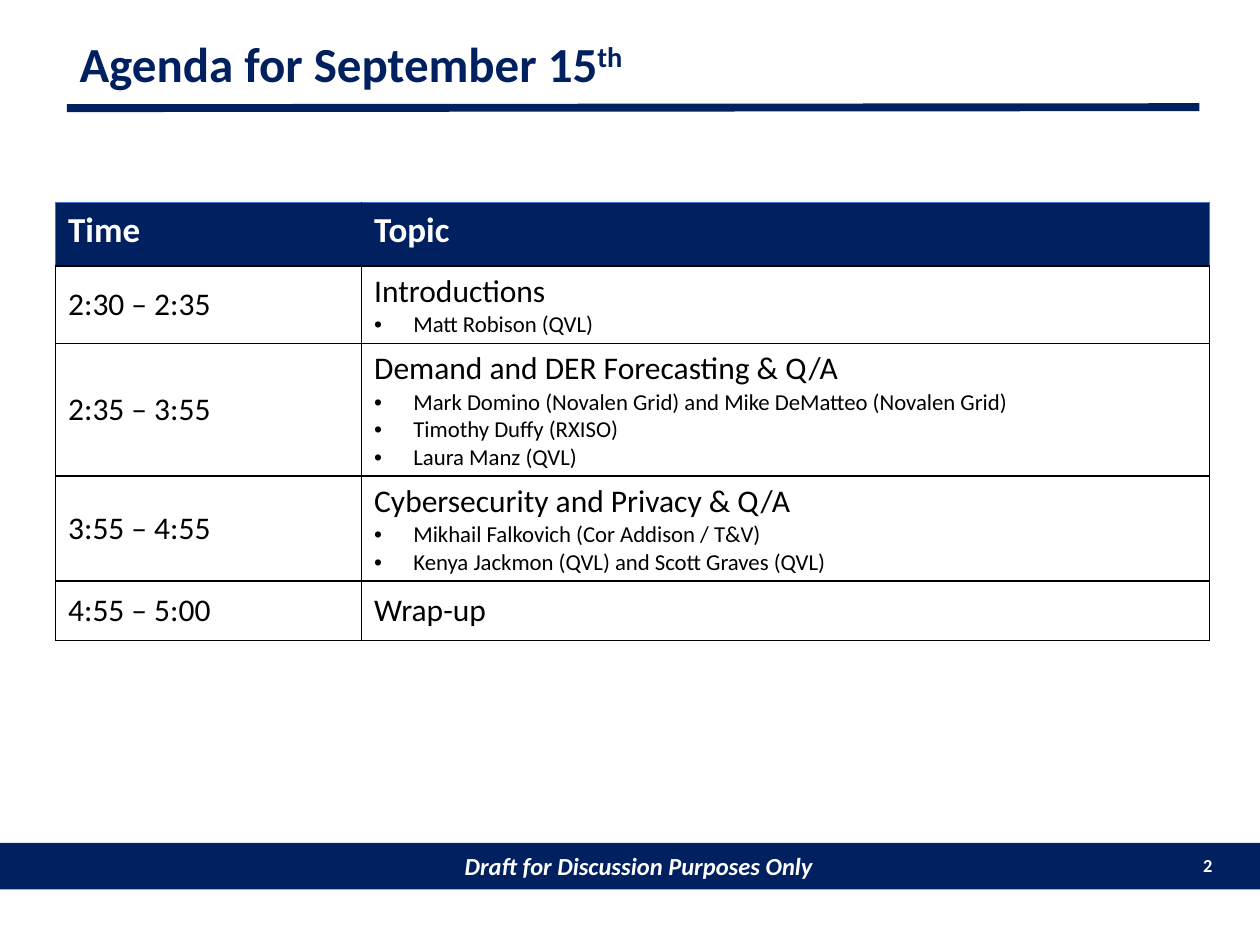
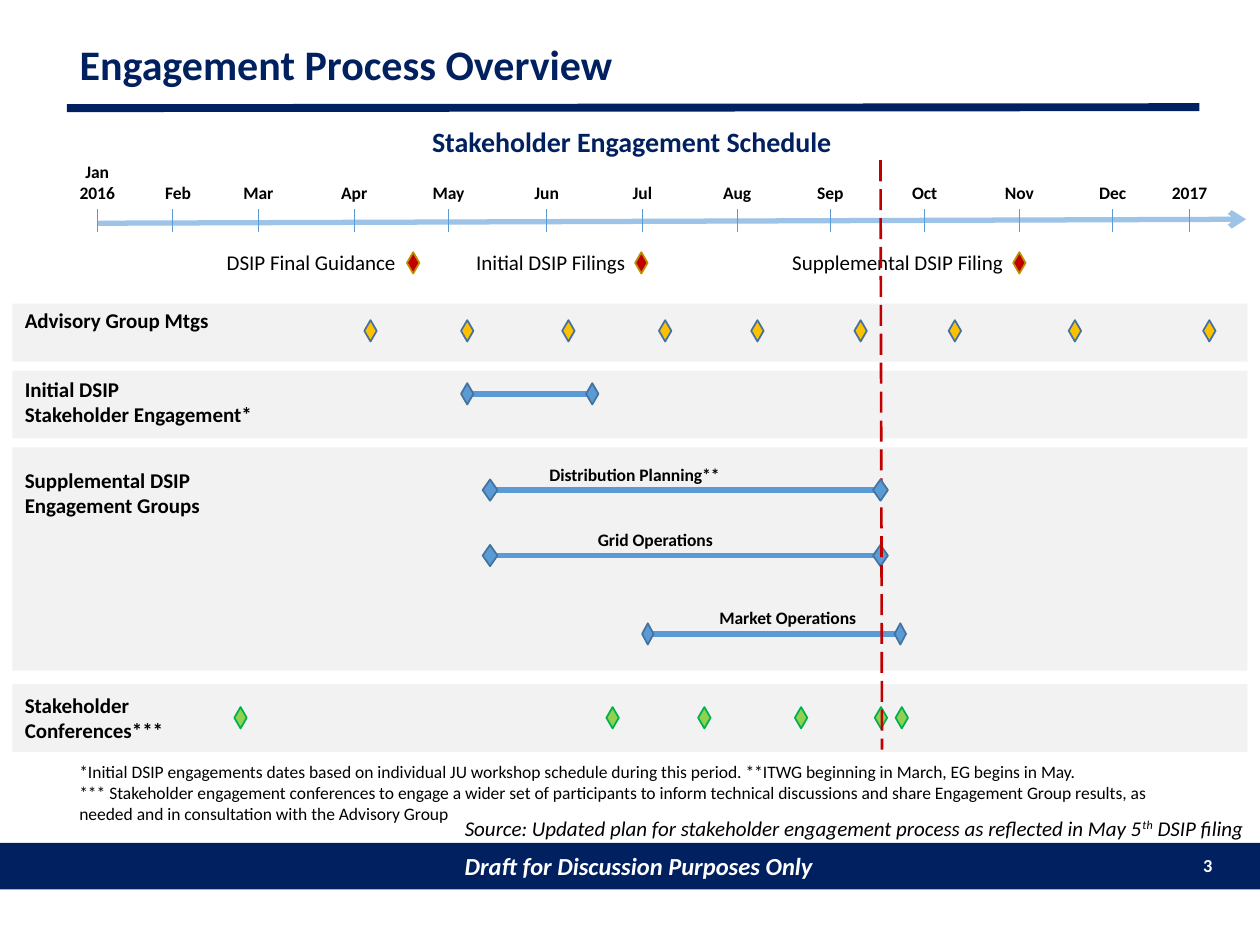
from lxml.etree import SubElement
from pptx import Presentation
from pptx.dml.color import RGBColor
from pptx.enum.dml import MSO_LINE
from pptx.enum.shapes import MSO_CONNECTOR, MSO_SHAPE
from pptx.enum.text import MSO_ANCHOR, MSO_AUTO_SIZE, PP_ALIGN
from pptx.oxml import parse_xml
from pptx.oxml.ns import nsdecls, qn
from pptx.util import Cm, Pt

COLORS = {
    "navy": "002060", "white": "FFFFFF", "black": "000000", "grey": "F2F2F2",
    "blue": "5B9BD5", "blue_edge": "43739E", "axis": "9DC3E6", "table_edge": "4472C4",
    "red": "C00000", "red_edge": "BD8E00", "yellow": "FFC000",
    "green": "92D050", "green_edge": "00B050",
}
FONT = "Calibri"

AGENDA = [
    ("2:30 – 2:35", "Introductions", ["Matt Robison (QVL)"]),
    ("2:35 – 3:55", "Demand and DER Forecasting & Q/A",
     ["Mark Domino (Novalen Grid) and Mike DeMatteo (Novalen Grid)",
      "Timothy Duffy (RXISO)", "Laura Manz (QVL)"]),
    ("3:55 – 4:55", "Cybersecurity and Privacy & Q/A",
     ["Mikhail Falkovich (Cor Addison / T&V)",
      "Kenya Jackmon (QVL) and Scott Graves (QVL)"]),
    ("4:55 – 5:00", "Wrap-up", []),
]
AGENDA_HEIGHTS = [1.27, 1.55, 2.65, 2.1, 1.19]

MONTHS = [
    ("Jan 2016", 1.96), ("Feb", 3.48), ("Mar", 5.21), ("Apr", 7.14), ("May", 9.04),
    ("Jun", 11.02), ("Jul", 12.95), ("Aug", 14.86), ("Sep", 16.74), ("Oct", 18.64),
    ("Nov", 20.55), ("Dec", 22.43), ("2017", 23.98),
]
MILESTONES = [
    ("DSIP Final Guidance", 4.32, 8.33),
    ("Initial DSIP Filings", 9.35, 12.93),
    ("Supplemental DSIP Filing", 15.72, 20.55),
]
LANES = [
    (6.12, 1.17, 6.07, ["Advisory Group Mtgs"]),
    (7.47, 1.37, 7.47, ["Initial DSIP", "Stakeholder Engagement*"]),
    (9.02, 4.5, 9.3, ["Supplemental DSIP", "Engagement Groups"]),
    (13.79, 1.37, 13.84, ["Stakeholder", "Conferences***"]),
]
ADVISORY_MEETINGS = [7.47, 9.42, 11.46, 13.41, 15.27, 17.35, 19.25, 21.67, 24.38]
CONFERENCES = [4.85, 12.35, 14.2, 16.15, 17.76, 18.18]


class Deck:
    def __init__(self, prs):
        self.prs = prs
        self.s = None

    def color(self, name):
        return RGBColor.from_string(COLORS[name])

    def slide(self, title, size, number):
        self.s = self.prs.slides.add_slide(self.prs.slide_layouts[5])
        band = self.shape(MSO_SHAPE.RECTANGLE, 0, 16.99, 25.4, 0.94, "navy")
        band.text_frame.margin_left = Cm(0.61)
        self.set_lines(band.text_frame, ["Draft for Discussion Purposes Only"], 14, "white",
                       True, True, PP_ALIGN.CENTER)
        self.text([str(number)], 23.65, 17.09, 1.04, 0.74, 10.5, "white", True,
                  align=PP_ALIGN.RIGHT)
        self.line(1.35, 2.18, 24.18, 2.16, "navy", 4.5)
        sp = self.s.shapes.title
        sp.left, sp.top, sp.width, sp.height = Cm(1.35), Cm(0.64), Cm(22.83), Cm(1.4)
        tf = sp.text_frame
        tf.auto_size = MSO_AUTO_SIZE.NONE
        tf.vertical_anchor = MSO_ANCHOR.MIDDLE
        self.set_lines(tf, [title], size, "navy", True)
        tf.paragraphs[0].line_spacing = 0.9

    def set_lines(self, tf, lines, size, color="black", bold=False, italic=False,
                  align=PP_ALIGN.LEFT):
        for i, line in enumerate(lines):
            p = tf.add_paragraph() if i else tf.paragraphs[0]
            p.alignment = align
            for j, piece in enumerate(line.split("^")):
                if not piece:
                    continue
                r = p.add_run()
                r.text = piece
                self.style(r.font, size, color, bold, italic)
                if j % 2:
                    r._r.get_or_add_rPr().set("baseline", "30000")

    def style(self, font, size, color, bold=False, italic=False):
        font.name, font.size = FONT, Pt(size)
        font.bold, font.italic = bold, italic
        font.color.rgb = self.color(color)

    def text(self, lines, x, y, w, h, size, color="black", bold=False, italic=False,
             align=PP_ALIGN.LEFT, anchor=MSO_ANCHOR.TOP):
        tf = self.s.shapes.add_textbox(Cm(x), Cm(y), Cm(w), Cm(h)).text_frame
        tf.word_wrap = True
        tf.vertical_anchor = anchor
        self.set_lines(tf, lines, size, color, bold, italic, align)

    def shape(self, kind, x, y, w, h, fill, edge=None):
        sp = self.s.shapes.add_shape(kind, Cm(x), Cm(y), Cm(w), Cm(h))
        sp.shadow.inherit = False
        sp.fill.solid()
        sp.fill.fore_color.rgb = self.color(fill)
        if edge:
            sp.line.color.rgb = self.color(edge)
            sp.line.width = Pt(1)
        else:
            sp.line.fill.background()
        return sp

    def diamond(self, x, y, fill, edge, w=0.25, h=0.43):
        self.shape(MSO_SHAPE.FLOWCHART_DECISION, x - w / 2, y - h / 2, w, h, fill, edge)

    def line(self, x1, y1, x2, y2, color, width, dash=None, arrow=False):
        c = self.s.shapes.add_connector(MSO_CONNECTOR.STRAIGHT, Cm(x1), Cm(y1), Cm(x2), Cm(y2))
        c.line.color.rgb = self.color(color)
        c.line.width = Pt(width)
        if dash:
            c.line.dash_style = dash
        if arrow:
            SubElement(c.line._get_or_add_ln(), qn("a:tailEnd"), type="arrow")
        SubElement(c._element.spPr, qn("a:effectLst"))

    def span(self, x1, x2, y, w=0.25, label=None, center=0):
        if label:
            self.text([label], center - 2.25, y - 0.66, 4.5, 0.69, 10, bold=True,
                      align=PP_ALIGN.CENTER)
        self.line(x1, y, x2, y, "blue", 3)
        for x in (x1, x2):
            self.diamond(x, y, "blue", "blue_edge", w)

    def table(self, x, y, widths, heights):
        frame = self.s.shapes.add_table(len(heights), len(widths), Cm(x), Cm(y),
                                        Cm(sum(widths)), Cm(sum(heights)))
        table = frame.table
        table.horz_banding = False
        for column, w in zip(table.columns, widths):
            column.width = Cm(w)
        for row, h in zip(table.rows, heights):
            row.height = Cm(h)
        return table

    def borders(self, cell, **sides):
        tcPr = cell._tc.get_or_add_tcPr()
        for i, side in enumerate("LRTB"):
            color, width = sides.get(side, ("black", 1))
            tcPr.insert(i, parse_xml(
                f'<a:ln{side} {nsdecls("a")} w="{Pt(width)}"><a:solidFill>'
                f'<a:srgbClr val="{COLORS[color]}"/></a:solidFill></a:ln{side}>'))

    def header_cell(self, cell, label, left, right):
        cell.fill.solid()
        cell.fill.fore_color.rgb = self.color("navy")
        self.set_lines(cell.text_frame, [label], 20, "white", True)
        self.borders(cell, L=(left, 0.5), R=(right, 0.5), T=("table_edge", 0.5))

    def body_cell(self, cell, heading, bullets=()):
        cell.fill.background()
        cell.vertical_anchor = MSO_ANCHOR.MIDDLE
        tf = cell.text_frame
        self.set_lines(tf, [heading], 18)
        for bullet in bullets:
            p = tf.add_paragraph()
            p.text = bullet
            pPr = p._p.get_or_add_pPr()
            pPr.set("marL", str(Cm(0.79)))
            pPr.set("indent", str(-Cm(0.79)))
            SubElement(pPr, qn("a:buFont"), typeface="Arial")
            SubElement(pPr, qn("a:buChar"), char="•")
            self.style(p.runs[0].font, 13, "black")
        self.borders(cell)


def agenda_slide(deck):
    deck.slide("Agenda for September 15^th^", 28, 2)
    table = deck.table(1.12, 4.09, [6.17, 17.09], AGENDA_HEIGHTS)
    deck.header_cell(table.cell(0, 0), "Time", "table_edge", "navy")
    deck.header_cell(table.cell(0, 1), "Topic", "navy", "table_edge")
    for row, (time, topic, speakers) in enumerate(AGENDA, 1):
        deck.body_cell(table.cell(row, 0), time)
        deck.body_cell(table.cell(row, 1), topic, speakers)


def schedule_slide(deck):
    deck.slide("Engagement Process Overview", 24, 3)
    deck.text(["*Initial DSIP engagements dates based on individual JU workshop schedule "
               "during this period. **ITWG beginning in March, EG begins in May.",
               "*** Stakeholder engagement conferences to engage a wider set of participants "
               "to inform technical discussions and share Engagement Group results, as needed "
               "and in consultation with the Advisory Group"],
              1.35, 15.21, 22.91, 1.55, 10)
    deck.text(["Source: Updated plan for stakeholder engagement process as reflected in "
               "May 5^th^ DSIP filing"], 9.12, 16.31, 16.28, 0.76, 12, italic=True)
    deck.text(["Stakeholder Engagement Schedule"], 8.46, 2.39, 10.59, 0.94, 16, "navy", True)

    deck.line(1.96, 4.5, 25.12, 4.42, "axis", 3, arrow=True)
    for month, x in MONTHS:
        deck.line(x, 4.22, x, 4.67, "blue", 0.5)
        center = x + 0.11 if month == "Feb" else x
        deck.text([month], center - 0.65, 3.1, 1.3, 1.12, 10, bold=True,
                  align=PP_ALIGN.CENTER, anchor=MSO_ANCHOR.BOTTOM)

    for label, left, x in MILESTONES:
        deck.text([label], left, 4.9, 5.2, 0.76, 12)
        deck.diamond(x, 5.3, "red", "red_edge")

    for top, height, label_top, label in LANES:
        deck.shape(MSO_SHAPE.RECTANGLE, 0.25, top, 24.9, height, "grey")
        deck.text(label, 0.25, label_top, 6, 0.25 + 0.51 * len(label), 12, bold=True)

    for x in ADVISORY_MEETINGS:
        deck.diamond(x, 6.67, "yellow", "blue_edge")
    for x in CONFERENCES:
        deck.diamond(x, 14.47, "green", "green_edge")
    deck.span(9.42, 11.94, 7.94)
    deck.span(9.88, 17.75, 11.2, 0.3, "Grid Operations", 13.21)
    deck.span(13.06, 18.15, 12.78, 0.23, "Market Operations", 15.88)
    deck.line(17.75, 3.23, 17.78, 15.11, "red", 1.5, dash=MSO_LINE.LONG_DASH)
    deck.span(9.88, 17.75, 9.88, 0.3, "Distribution Planning**", 12.79)


def main():
    prs = Presentation()
    prs.slide_width, prs.slide_height = Cm(25.4), Cm(19.05)
    deck = Deck(prs)
    agenda_slide(deck)
    schedule_slide(deck)
    prs.save("out.pptx")


if __name__ == "__main__":
    main()
